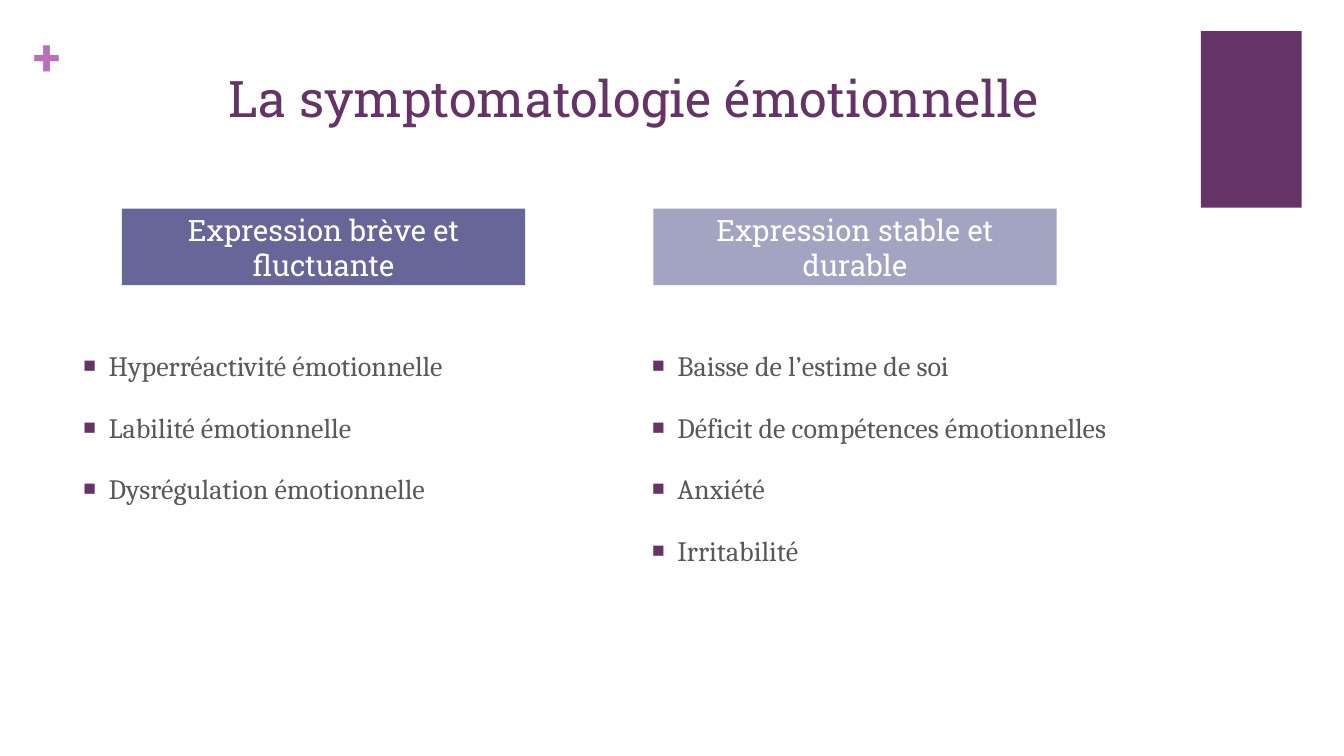
from lxml import etree
from pptx import Presentation
from pptx.dml.color import RGBColor
from pptx.enum.shapes import MSO_SHAPE
from pptx.enum.text import MSO_ANCHOR, PP_ALIGN
from pptx.oxml.ns import qn
from pptx.util import Inches, Pt

COLORS = {"plum": "663366", "orchid": "B870B8", "indigo": "666699",
          "lavender": "A3A3C2", "gray": "595959", "white": "FFFFFF"}
HEAD_FONT, BODY_FONT = "Roboto Slab", "Cambria"

TITLE = "La symptomatologie émotionnelle"
COLUMNS = [
    {"heading": "Expression brève et fluctuante", "fill": "indigo",
     "heading_left": 1.21, "list_left": 0.73,
     "items": ["Hyperréactivité émotionnelle", "Labilité émotionnelle",
               "Dysrégulation émotionnelle"]},
    {"heading": "Expression stable et durable", "fill": "lavender",
     "heading_left": 6.48, "list_left": 6.37,
     "items": ["Baisse de l’estime de soi",
               "Déficit de compétences émotionnelles",
               "Anxiété", "Irritabilité"]},
]


def rgb(name):
    return RGBColor.from_string(COLORS[name])


def add_rect(slide, box, fill):
    sp = slide.shapes.add_shape(MSO_SHAPE.RECTANGLE, *map(Inches, box))
    sp.shadow.inherit = False
    sp.fill.solid()
    sp.fill.fore_color.rgb = rgb(fill)
    sp.line.fill.background()
    return sp


def add_text_frame(slide, box):
    tf = slide.shapes.add_textbox(*map(Inches, box)).text_frame
    tf.word_wrap = True
    return tf


def add_run(p, text, size, font, color, bold=False):
    r = p.add_run()
    r.text = text
    r.font.size = Pt(size)
    r.font.name = font
    r.font.bold = bold
    r.font.color.rgb = rgb(color)


def set_bullet(p):
    """Give the paragraph a hanging square bullet."""
    pPr = p._p.get_or_add_pPr()
    pPr.set("marL", str(Inches(0.25)))
    pPr.set("indent", str(-Inches(0.25)))
    color = etree.SubElement(pPr, qn("a:buClr"))
    etree.SubElement(color, qn("a:srgbClr"), val=COLORS["plum"])
    etree.SubElement(pPr, qn("a:buSzPct"), val="75000")
    etree.SubElement(pPr, qn("a:buFont"), typeface="Arial")
    etree.SubElement(pPr, qn("a:buChar"), char="■")


def add_column(slide, column):
    sp = add_rect(slide, (column["heading_left"], 2.07, 4, 0.76), column["fill"])
    tf = sp.text_frame
    tf.word_wrap = True
    tf.vertical_anchor = MSO_ANCHOR.MIDDLE
    tf.margin_top = tf.margin_bottom = 0
    p = tf.paragraphs[0]
    p.alignment = PP_ALIGN.CENTER
    add_run(p, column["heading"], 21, HEAD_FONT, "white")

    tf = add_text_frame(slide, (column["list_left"], 3.41, 5.33, 3.45))
    for i, item in enumerate(column["items"]):
        p = tf.add_paragraph() if i else tf.paragraphs[0]
        p.space_before = Pt(20 if i else 0)
        set_bullet(p)
        add_run(p, item, 20, BODY_FONT, "gray")


def main():
    prs = Presentation()
    prs.slide_width, prs.slide_height = Inches(13.33), Inches(7.5)
    slide = prs.slides.add_slide(prs.slide_layouts[6])

    add_rect(slide, (11.91, 0.31, 1, 1.75), "plum")

    tf = add_text_frame(slide, (0.33, 0.25, 0.38, 0.61))
    tf.margin_left = tf.margin_right = tf.margin_top = tf.margin_bottom = 0
    add_run(tf.paragraphs[0], "+", 36, HEAD_FONT, "orchid", bold=True)

    tf = add_text_frame(slide, (2.17, 0.62, 8.62, 1.09))
    add_run(tf.paragraphs[0], TITLE, 36, HEAD_FONT, "plum")

    for column in COLUMNS:
        add_column(slide, column)
    prs.save("out.pptx")


if __name__ == "__main__":
    main()
